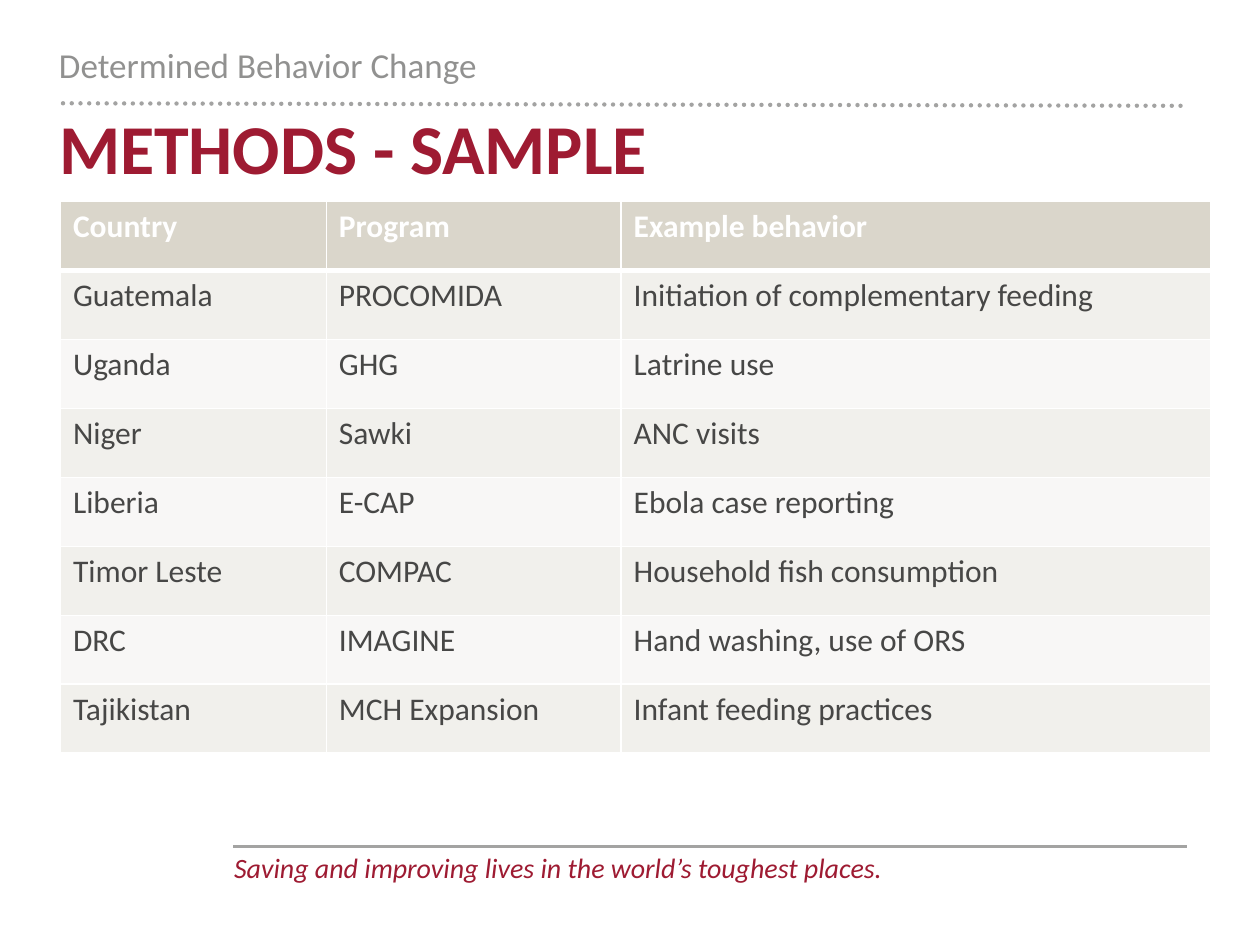
from dataclasses import dataclass

from lxml.etree import SubElement
from pptx import Presentation
from pptx.dml.color import RGBColor
from pptx.enum.dml import MSO_LINE
from pptx.enum.shapes import MSO_CONNECTOR
from pptx.enum.text import MSO_ANCHOR
from pptx.oxml.ns import qn
from pptx.util import Emu, Inches, Pt

CRIMSON = RGBColor(0x9E, 0x1B, 0x32)
RULE_GRAY = RGBColor(0xA3, 0xA3, 0xA2)
LABEL_GRAY = RGBColor(0x91, 0x91, 0x90)
BODY_GRAY = RGBColor(0x47, 0x47, 0x46)
WHITE = RGBColor(0xFF, 0xFF, 0xFF)
HEADER_FILL = RGBColor(0xDA, 0xD6, 0xCB)
BAND_FILLS = (RGBColor(0xF1, 0xF0, 0xEC), RGBColor(0xF8, 0xF7, 0xF6))

FONT = "Calibri"
SLIDE_WIDTH, SLIDE_HEIGHT = Inches(10), Inches(7.5)
COLUMN_SHARES = (21.1, 23.4, 46.8)
SAMPLE = (
    ("Country", "Program", "Example behavior"),
    ("Guatemala", "PROCOMIDA", "Initiation of complementary feeding"),
    ("Uganda", "GHG", "Latrine use"),
    ("Niger", "Sawki", "ANC visits"),
    ("Liberia", "E-CAP", "Ebola case reporting"),
    ("Timor Leste", "COMPAC", "Household fish consumption"),
    ("DRC", "IMAGINE", "Hand washing, use of ORS"),
    ("Tajikistan", "MCH Expansion", "Infant feeding practices"),
)


@dataclass(frozen=True)
class Area:
    """A rectangle in percent of the slide's width and height."""
    left: float
    top: float
    width: float
    height: float

    def lengths(self) -> tuple[Emu, Emu, Emu, Emu]:
        return across(self.left), down(self.top), across(self.width), down(self.height)


@dataclass(frozen=True)
class Label:
    text: str
    area: Area
    size: int
    color: RGBColor
    bold: bool = False
    italic: bool = False
    anchor: MSO_ANCHOR = MSO_ANCHOR.TOP


@dataclass(frozen=True)
class Rule:
    """A line whose ends are in percent of the slide's size."""
    start: tuple[float, float]
    end: tuple[float, float]
    weight: float
    dotted: bool = False


LABELS = (
    Label("Saving and improving lives in the world’s toughest places.",
          Area(17.6, 89.33, 77.5, 4.93), 16, CRIMSON, italic=True),
    Label("METHODS - SAMPLE", Area(3.7, 9.73, 90.5, 11.6), 40, CRIMSON,
          bold=True, anchor=MSO_ANCHOR.MIDDLE),
    Label("Determined Behavior Change", Area(3.7, 4, 47.7, 6.13), 20, LABEL_GRAY),
)
RULES = (
    Rule((18.5, 89.6), (94.2, 89.6), 1.5),
    Rule((5, 10.93), (94.2, 11.2), 2.5, dotted=True),
)
TABLE_AREA = Area(4.8, 21.33, 91.3, 58.4)


def across(percent: float) -> Emu:
    return Emu(round(SLIDE_WIDTH * percent / 100))


def down(percent: float) -> Emu:
    return Emu(round(SLIDE_HEIGHT * percent / 100))


def style_font(font, size: int, color: RGBColor, bold=False, italic=False) -> None:
    font.name, font.size = FONT, Pt(size)
    font.bold, font.italic = bold, italic
    font.color.rgb = color


def draw_label(page, label: Label) -> None:
    frame = page.shapes.add_textbox(*label.area.lengths()).text_frame
    frame.word_wrap = True
    frame.vertical_anchor = label.anchor
    paragraph = frame.paragraphs[0]
    paragraph.text = label.text
    style_font(paragraph.font, label.size, label.color, label.bold, label.italic)


def draw_rule(page, rule: Rule) -> None:
    (x1, y1), (x2, y2) = rule.start, rule.end
    connector = page.shapes.add_connector(
        MSO_CONNECTOR.STRAIGHT, across(x1), down(y1), across(x2), down(y2))
    connector.line.color.rgb = RULE_GRAY
    connector.line.width = Pt(rule.weight)
    if rule.dotted:
        connector.line.dash_style = MSO_LINE.ROUND_DOT
        connector.line._get_or_add_ln().set("cap", "rnd")
    SubElement(connector._element.spPr, qn("a:effectLst"))


def add_borders(cell, top: float, bottom: float) -> None:
    """Add white borders; they must come before the cell's fill."""
    properties = cell._tc.get_or_add_tcPr()
    for side, weight in (("L", 1), ("R", 1), ("T", top), ("B", bottom)):
        line = SubElement(properties, qn(f"a:ln{side}"), w=str(Pt(weight)))
        fill = SubElement(line, qn("a:solidFill"))
        SubElement(fill, qn("a:srgbClr"), val=str(WHITE))


def draw_table(page) -> None:
    table = page.shapes.add_table(
        len(SAMPLE), len(COLUMN_SHARES), *TABLE_AREA.lengths()).table
    for column, share in zip(table.columns, COLUMN_SHARES):
        column.width = across(share)
    for row, texts in enumerate(SAMPLE):
        is_header = row == 0
        for column, text in enumerate(texts):
            cell = table.cell(row, column)
            add_borders(cell, top=3 if row == 1 else 1, bottom=3 if is_header else 1)
            cell.fill.solid()
            cell.fill.fore_color.rgb = HEADER_FILL if is_header else BAND_FILLS[(row - 1) % 2]
            cell.text = text
            style_font(cell.text_frame.paragraphs[0].font, 18,
                       WHITE if is_header else BODY_GRAY, bold=is_header)


def main() -> None:
    deck = Presentation()
    deck.slide_width, deck.slide_height = SLIDE_WIDTH, SLIDE_HEIGHT
    page = deck.slides.add_slide(deck.slide_layouts[6])
    for rule in RULES:
        draw_rule(page, rule)
    for label in LABELS:
        draw_label(page, label)
    draw_table(page)
    deck.save("out.pptx")


if __name__ == "__main__":
    main()
